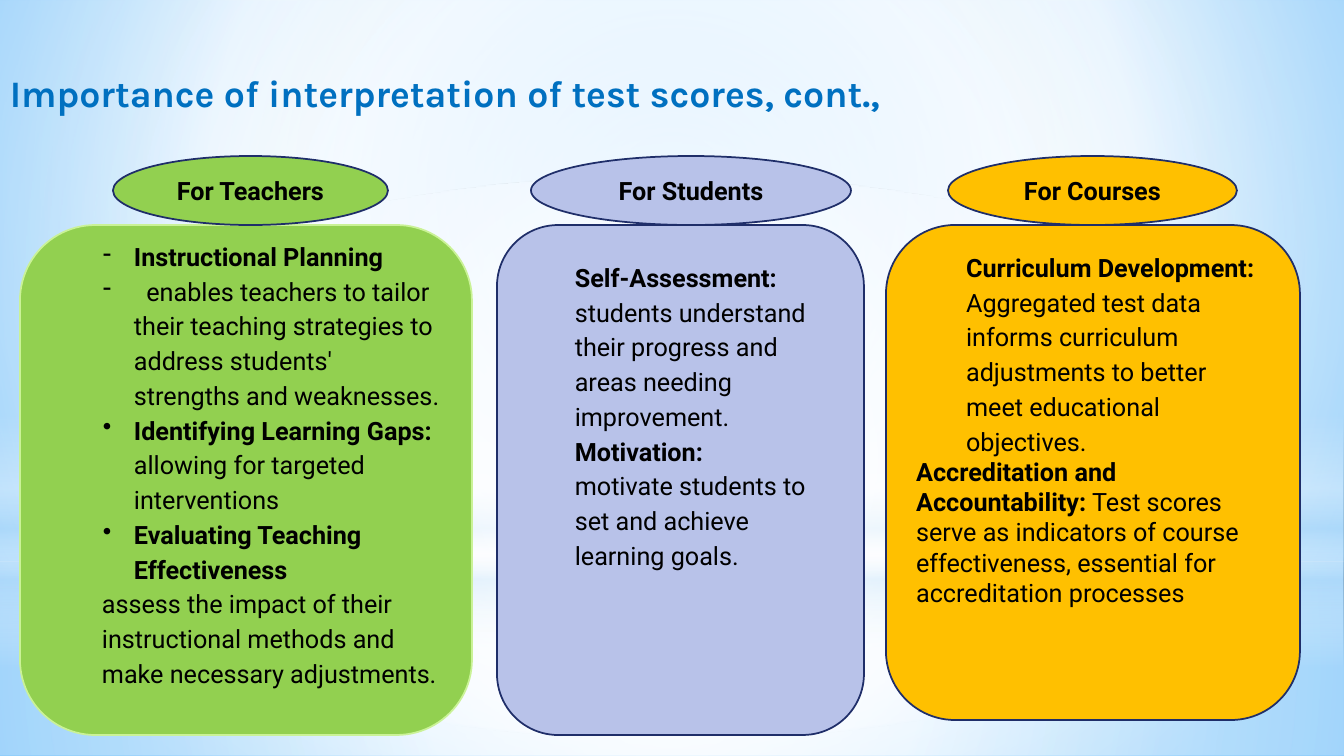
from lxml.etree import SubElement
from pptx import Presentation
from pptx.dml.color import RGBColor
from pptx.enum.shapes import MSO_SHAPE
from pptx.enum.text import MSO_ANCHOR, PP_ALIGN
from pptx.oxml.ns import qn
from pptx.util import Pt

PX = 914400 / 100.8
WIDTH, HEIGHT = 1344, 756

COLORS = {
    "title": "0070C0", "text": "000000", "navy": "1F2E69",
    "green": "92D050", "pale_green": "CAF297", "lilac": "B8C2E9", "amber": "FFC000",
    "white": "FFFFFF", "mist": "B4DCFA", "sky": "9ED5FF", "blue": "5BB9FF",
}

TITLE = "Importance of interpretation of test scores, cont.,"

# Paragraph: (style, [(text, bold), ...])
COLUMNS = [
    {
        "heading": "For Teachers", "oval": (113, 275), "card": (20, 452, 510),
        "fill": "green", "outline": "pale_green", "space_below": 35,
        "body": [
            ("-", [("Instructional Planning", True)]),
            ("-", [("  enables teachers to tailor their teaching strategies to "
                    "address students' strengths and weaknesses.", False)]),
            ("•", [("Identifying Learning Gaps: ", True),
                   ("allowing for targeted interventions", False)]),
            ("•", [("Evaluating Teaching Effectiveness", True)]),
            ("indented", [("assess the impact of their instructional methods and "
                           "make necessary adjustments.", False)]),
        ],
    },
    {
        "heading": "For Students", "oval": (531, 320), "card": (497, 367, 510),
        "fill": "lilac", "outline": "navy", "space_below": 132,
        "body": [
            ("indented", [("Self-Assessment:", True),
                          ("  students understand their progress and areas "
                           "needing improvement.", False)]),
            ("indented", [("Motivation:", True)]),
            ("indented", [("motivate students to set and achieve learning goals.", False)]),
        ],
    },
    {
        "heading": "For Courses", "oval": (948, 289), "card": (886, 414, 495),
        "fill": "amber", "outline": "navy", "space_below": 90,
        "body": [
            ("indented", [("Curriculum Development:", True),
                          (" Aggregated test data informs curriculum adjustments "
                           "to better meet educational objectives.", False)]),
            ("plain", [("Accreditation and Accountability:", True),
                       (" Test scores serve as indicators of course effectiveness, "
                        "essential for accreditation processes", False)]),
        ],
    },
]
OVAL_TOP, OVAL_HEIGHT = 156, 69
CARD_TOP = OVAL_TOP + OVAL_HEIGHT
INSET = 5
INDENT, BULLET_INDENT, BULLET_HANG = 50, 82, 31

# Gradient: stops of (position %, colour, opacity %), then focus rectangle or angle
CENTRE = (50, 50, 50, 50)
BACKDROP = ([(0, "sky", 100), (60, "white", 100), (100, "blue", 100)], (20, 10, 20, 60))
GLOWS = [
    (MSO_SHAPE.RECTANGLE, (0, 562, WIDTH, 194),
     [(0, "white", 91), (37, "white", 76), (100, "mist", 79)], CENTRE),
    (MSO_SHAPE.RECTANGLE, (0, 0, WIDTH, 562),
     [(0, "white", 89), (48, "white", 62), (100, "mist", 79)], CENTRE),
    (MSO_SHAPE.RECTANGLE, (0, 415, WIDTH, 252),
     [(0, "white", 0), (29, "white", 30), (45, "mist", 40), (55, "white", 26),
      (65, "mist", 60), (100, "white", 0)], 90),
    (MSO_SHAPE.OVAL, (0, 176, WIDTH, 562),
     [(0, "white", 100), (56, "white", 0)], CENTRE),
]


def emu(px):
    return round(px * PX)


def rgb(name):
    return RGBColor.from_string(COLORS[name])


def fill_gradient(fill, owner, stops, direction):
    """Fill with stops running outward from a focus rectangle, or along an angle."""
    fill.gradient()
    gradient = owner.xpath(".//a:gradFill")[0]
    for child in list(gradient):
        gradient.remove(child)
    stop_list = SubElement(gradient, qn("a:gsLst"))
    for position, color, opacity in stops:
        stop = SubElement(stop_list, qn("a:gs"), pos=str(position * 1000))
        tint = SubElement(stop, qn("a:srgbClr"), val=COLORS[color])
        if opacity < 100:
            SubElement(tint, qn("a:alpha"), val=str(opacity * 1000))
    if isinstance(direction, tuple):
        radial = SubElement(gradient, qn("a:path"), {"path": "circle"})
        edges = {side: str(edge * 1000) for side, edge in zip("ltrb", direction)}
        SubElement(radial, qn("a:fillToRect"), edges)
    else:
        SubElement(gradient, qn("a:lin"), ang=str(direction * 60000), scaled="0")


def add_panel(slide, kind, box):
    panel = slide.shapes.add_shape(kind, *map(emu, box))
    panel.shadow.inherit = False
    return panel


def add_filled_panel(slide, kind, box, fill, outline):
    panel = add_panel(slide, kind, box)
    panel.fill.solid()
    panel.fill.fore_color.rgb = rgb(fill)
    panel.line.color.rgb = rgb(outline)
    panel.line.width = Pt(1.25)
    frame = panel.text_frame
    frame.word_wrap = True
    frame.vertical_anchor = MSO_ANCHOR.MIDDLE
    return frame


def add_run(paragraph, text, bold=True, size=18, font="Roboto", color="text"):
    run = paragraph.add_run()
    run.text = text
    run.font.name = font
    run.font.size = Pt(size)
    run.font.bold = bold
    run.font.color.rgb = rgb(color)
    return run


def style_paragraph(paragraph, style):
    paragraph.alignment = PP_ALIGN.LEFT
    if style == "plain":
        return
    paragraph.level = 1
    paragraph.line_spacing = 1.15
    bulleted = style != "indented"
    props = paragraph._p.get_or_add_pPr()
    props.set("marL", str(emu(BULLET_INDENT if bulleted else INDENT)))
    props.set("indent", str(emu(-BULLET_HANG if bulleted else 0)))
    if bulleted:
        SubElement(props, qn("a:buChar"), char=style)


def add_title(slide):
    frame = slide.shapes.add_textbox(*map(emu, (0, 22, 1212, 70))).text_frame
    frame.word_wrap = True
    run = add_run(frame.paragraphs[0], TITLE, size=46, font="Karla", color="title")
    run.font._element.set("baseline", "-25000")


def add_card(slide, column):
    left, width, height = column["card"]
    frame = add_filled_panel(slide, MSO_SHAPE.ROUNDED_RECTANGLE,
                             (left, CARD_TOP, width, height),
                             column["fill"], column["outline"])
    frame.margin_bottom = emu(INSET + column["space_below"])
    for index, (style, runs) in enumerate(column["body"]):
        paragraph = frame.add_paragraph() if index else frame.paragraphs[0]
        style_paragraph(paragraph, style)
        for text, bold in runs:
            add_run(paragraph, text, bold)


def add_heading(slide, column):
    left, width = column["oval"]
    frame = add_filled_panel(slide, MSO_SHAPE.OVAL, (left, OVAL_TOP, width, OVAL_HEIGHT),
                             column["fill"], "navy")
    frame.paragraphs[0].alignment = PP_ALIGN.CENTER
    add_run(frame.paragraphs[0], column["heading"])


def main():
    deck = Presentation()
    deck.slide_width, deck.slide_height = emu(WIDTH), emu(HEIGHT)
    slide = deck.slides.add_slide(deck.slide_layouts[6])
    fill_gradient(slide.background.fill, slide.element, *BACKDROP)
    for kind, box, stops, direction in GLOWS:
        glow = add_panel(slide, kind, box)
        glow.line.fill.background()
        fill_gradient(glow.fill, glow.element, stops, direction)
    add_title(slide)
    for column in COLUMNS:
        add_card(slide, column)
    for column in COLUMNS:
        add_heading(slide, column)
    deck.save("out.pptx")


if __name__ == "__main__":
    main()
